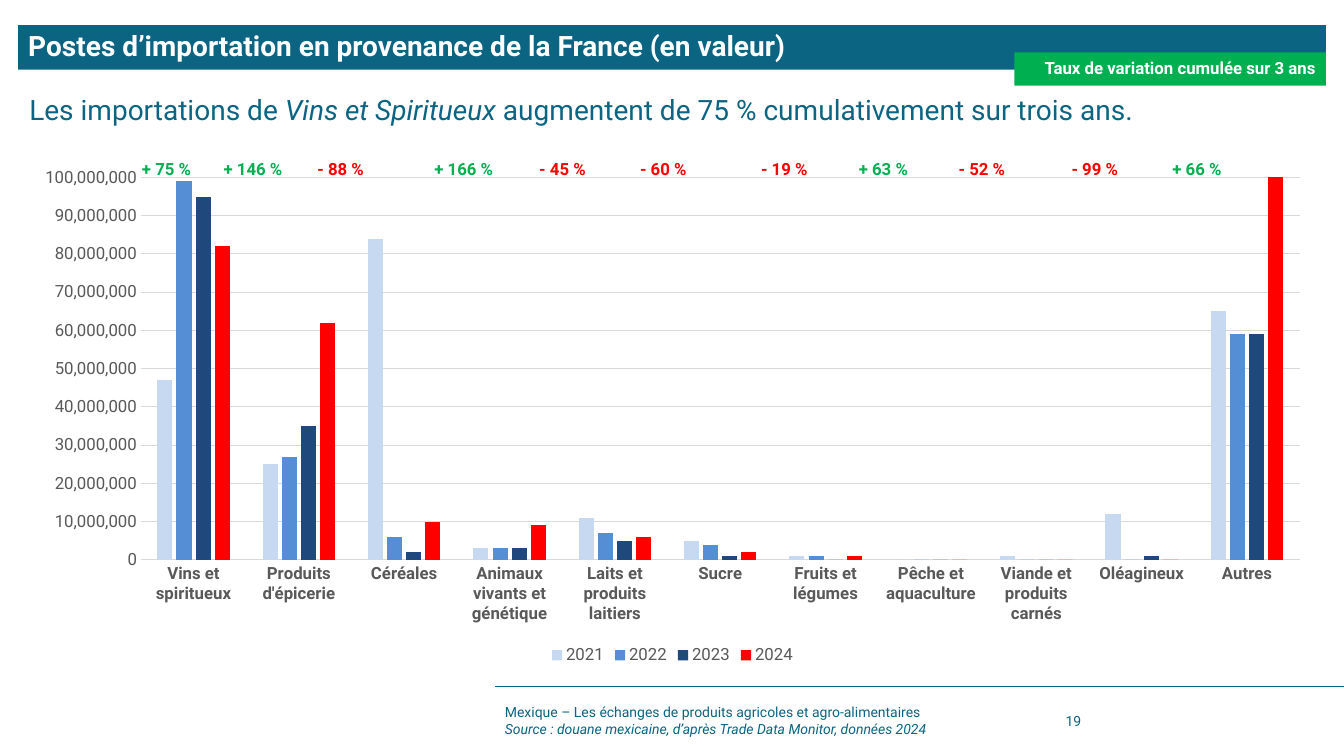
from dataclasses import dataclass

import lxml.etree
import pptx
import pptx.chart.data
import pptx.dml.color
import pptx.enum.chart
import pptx.enum.shapes
import pptx.enum.text
import pptx.oxml.ns
import pptx.util

Inches, Pt = pptx.util.Inches, pptx.util.Pt
RGB = pptx.dml.color.RGBColor.from_string
PP_ALIGN, ANCHOR = pptx.enum.text.PP_ALIGN, pptx.enum.text.MSO_ANCHOR
qn = pptx.oxml.ns.qn


@dataclass(frozen=True)
class Theme:
    font: str = "Roboto"
    teal: str = "0B6482"
    white: str = "FFFFFF"
    up: str = "00B050"
    down: str = "FF0000"
    grey: str = "595959"
    rule: str = "D9D9D9"
    years: tuple = ("C6D9F1", "558ED5", "1F497D", "FF0000")
    heading: int = 20
    label: int = 12
    small: int = 10


T = Theme()

CATEGORIES = ["Vins et spiritueux", "Produits d'épicerie", "Céréales",
              "Animaux vivants et génétique", "Laits et produits laitiers",
              "Sucre", "Fruits et légumes", "Pêche et aquaculture",
              "Viande et produits carnés", "Oléagineux", "Autres"]
MILLIONS = {
    "2021": [47, 25, 84, 3, 11, 5, 1, 0, 1, 12, 65],
    "2022": [99, 27, 6, 3, 7, 4, 1, 0, 0, 0, 59],
    "2023": [95, 35, 2, 3, 5, 1, 0, 0, 0, 1, 59],
    "2024": [82, 62, 10, 9, 6, 2, 1, 0, 0, 0, 108],
}
RATES = ["+ 75 %", "+ 146 %", "- 88 %", "+ 166 %", "- 45 %", "- 60 %",
         "- 19 %", "+ 63 %", "- 52 %", "- 99 %", "+ 66 %"]
RATE_TABS = [0.81, 1.74, 2.9, 3.94, 4.94, 6.14, 7.11, 8.1, 9.22, 10.22]


def set_font(font, size, color, **extra):
    values = {"name": T.font, "size": Pt(size), "bold": False, "italic": False, **extra}
    for key, value in values.items():
        setattr(font, key, value)
    font.color.rgb = RGB(color)


def place(sp, box):
    for key, value in zip(("left", "top", "width", "height"), box):
        setattr(sp, key, Inches(value))


def write(sp, paragraphs, size, color, anchor=ANCHOR.MIDDLE, align=PP_ALIGN.LEFT,
          spacing=1.0, bold=False):
    """Fill a shape; each paragraph is a list of (text, italic) runs."""
    tf = sp.text_frame
    for key, value in {"word_wrap": True, "vertical_anchor": anchor,
                       "auto_size": pptx.enum.text.MSO_AUTO_SIZE.NONE}.items():
        setattr(tf, key, value)
    for i, runs in enumerate(paragraphs):
        p = tf.add_paragraph() if i else tf.paragraphs[0]
        for key, value in {"alignment": align, "line_spacing": spacing,
                           "space_before": Pt(0)}.items():
            setattr(p, key, value)
        for text, italic in runs:
            r = p.add_run()
            r.text = text
            set_font(r.font, size, color, bold=bold, italic=italic)


def fill(sp, color):
    sp.fill.solid()
    sp.fill.fore_color.rgb = RGB(color)
    sp.line.fill.background()


def heading(s, box):
    x, y, w, h = box
    title, body = s.shapes.title, s.placeholders[1]
    place(title, (x, y, w, h))
    fill(title, T.teal)
    write(title, [[("Postes d’importation en provenance de la France (en valeur)", False)]],
          T.heading, T.white, spacing=0.9, bold=True)

    place(body, (x + 0.01, y + 0.68, w, 0.39))
    pPr = body.text_frame.paragraphs[0]._p.get_or_add_pPr()
    pPr.set("marL", "0")
    pPr.set("indent", "0")
    lxml.etree.SubElement(pPr, qn("a:buNone"))
    write(body, [[("Les importations de ", False), ("Vins et Spiritueux ", True),
                  ("augmentent de 75 % cumulativement sur trois ans.", False)]],
          T.heading, T.teal, anchor=ANCHOR.TOP, spacing=0.8)

    badge_w = 3.09
    badge = s.shapes.add_shape(pptx.enum.shapes.MSO_SHAPE.RECTANGLE,
                               Inches(x + w - badge_w), Inches(y + 0.27),
                               Inches(badge_w), Inches(0.33))
    badge.shadow.inherit = False
    fill(badge, T.up)
    write(badge, [[("Taux de variation cumulée sur 3 ans", False)]], T.label, T.white,
          align=PP_ALIGN.RIGHT, spacing=0.9, bold=True)


def imports_chart(s, box):
    data = pptx.chart.data.CategoryChartData(number_format="#,##0")
    data.categories = CATEGORIES
    for year, values in MILLIONS.items():
        data.add_series(year, [v * 1_000_000 for v in values])
    chart = s.shapes.add_chart(pptx.enum.chart.XL_CHART_TYPE.COLUMN_CLUSTERED,
                               *map(Inches, box), data).chart
    chart.has_title = False
    set_font(chart.font, T.label, T.grey)
    chart.has_legend = True
    legend = chart.legend
    legend.position = pptx.enum.chart.XL_LEGEND_POSITION.BOTTOM
    legend.include_in_layout = False
    set_font(legend.font, T.label, T.grey)

    plot = chart.plots[0]
    for key, value in {"gap_width": 219, "overlap": -27, "vary_by_categories": False}.items():
        setattr(plot, key, value)
    for series, color in zip(plot.series, T.years):
        series.invert_if_negative = False
        fill_format = series.format.fill
        fill_format.solid()
        fill_format.fore_color.rgb = RGB(color)

    cat, val = chart.category_axis, chart.value_axis
    for axis, bold in ((cat, True), (val, False)):
        axis.major_tick_mark = axis.minor_tick_mark = pptx.enum.chart.XL_TICK_MARK.NONE
        set_font(axis.tick_labels.font, T.label, T.grey, bold=bold)
    for key, value in {"minimum_scale": 0, "maximum_scale": 100_000_000,
                       "major_unit": 10_000_000, "has_major_gridlines": True}.items():
        setattr(val, key, value)
    val.tick_labels.number_format = "#,##0"
    val.tick_labels.number_format_is_linked = False
    val.format.line.fill.background()
    for line in (cat.format.line, val.major_gridlines.format.line):
        line.color.rgb = RGB(T.rule)
        line.width = Pt(0.75)


def variation_row(s, box):
    """Rates of change on one line, set on tab stops above the columns."""
    tb = s.shapes.add_textbox(*map(Inches, box))
    tb.text_frame.word_wrap = True
    p = tb.text_frame.paragraphs[0]
    tabs = lxml.etree.SubElement(p._p.get_or_add_pPr(), qn("a:tabLst"))
    for pos in RATE_TABS:
        lxml.etree.SubElement(tabs, qn("a:tab"), pos=str(int(Inches(pos))), algn="l")
    for i, rate in enumerate(RATES):
        r = p.add_run()
        r.text = "\t" + rate if i else rate
        set_font(r.font, T.label, T.up if rate.startswith("+") else T.down, bold=True)


def footer(s, box):
    x, y, w, h = box
    line = s.shapes.add_connector(pptx.enum.shapes.MSO_CONNECTOR.STRAIGHT,
                                  Inches(x + w), Inches(y), Inches(x), Inches(y))
    line.line.color.rgb = RGB(T.teal)
    line.line.width = Pt(0.5)
    lxml.etree.SubElement(line._element.spPr, qn("a:effectLst"))
    source = [[("Mexique – Les échanges de produits agricoles et agro-alimentaires", False)],
              [("Source : douane mexicaine, d’après Trade Data Monitor, données 2024", True)]]
    for dx, width, paragraphs in ((0, 5.43, source), (5.56, 0.99, [[("19", False)]])):
        tb = s.shapes.add_textbox(Inches(x + dx), Inches(y + 0.14), Inches(width),
                                  Inches(h - 0.14))
        write(tb, paragraphs, T.small, T.teal)


def main():
    prs = pptx.Presentation()
    prs.slide_width, prs.slide_height = Inches(13.33), Inches(7.5)
    s = prs.slides.add_slide(prs.slide_layouts[1])
    footer(s, (4.91, 6.81, 8.42, 0.54))
    heading(s, (0.18, 0.25, 12.97, 0.44))
    imports_chart(s, (0.19, 1.56, 12.96, 5.08))
    variation_row(s, (1.31, 1.53, 11.93, 0.49))
    prs.save("out.pptx")


if __name__ == "__main__":
    main()
